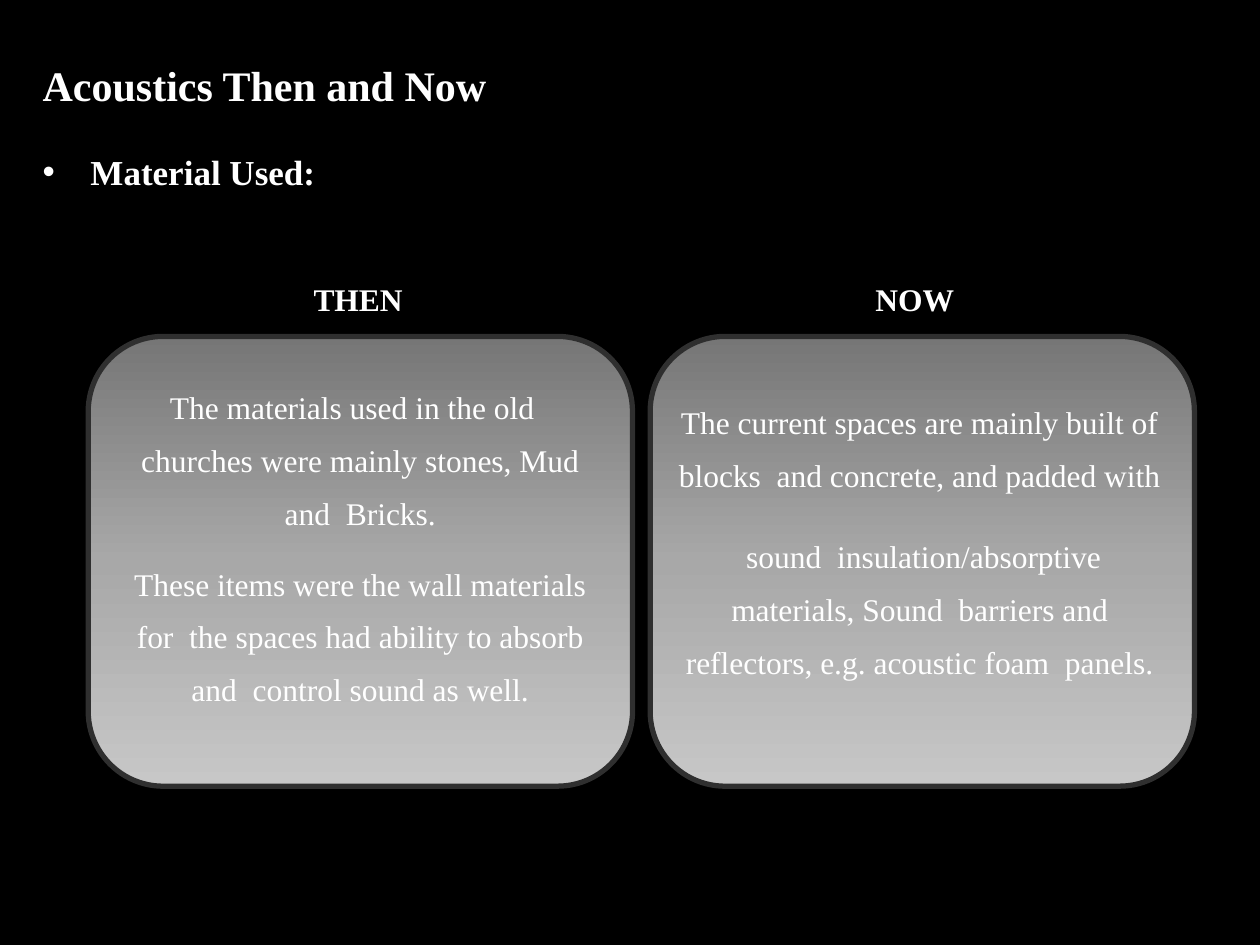
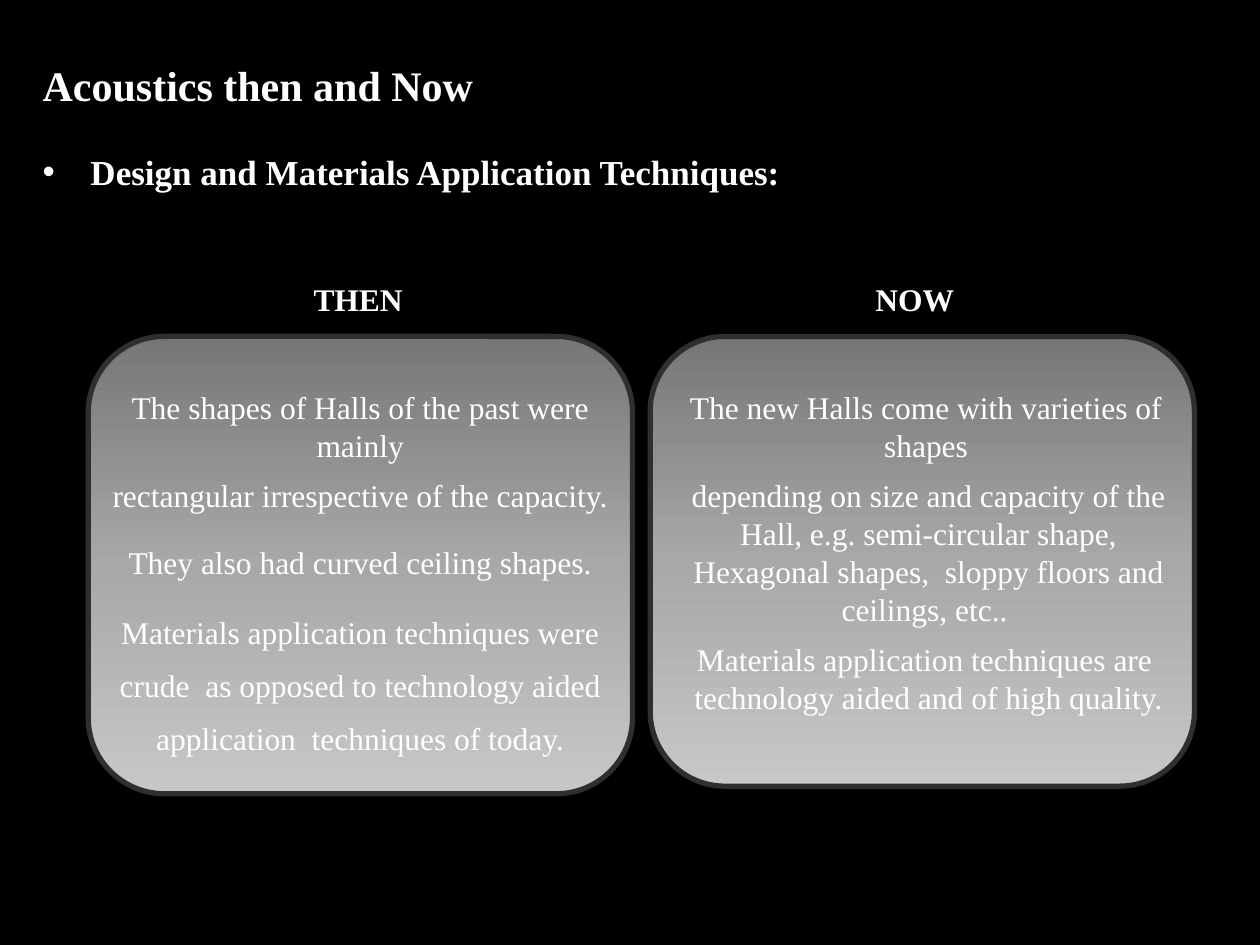
from copy import deepcopy

from lxml import etree
from pptx import Presentation
from pptx import util as u
from pptx.dml.color import RGBColor
from pptx.enum import shapes, text
from pptx.oxml import ns

COLOURS = {
    "back": "000000",
    "text": "FFFFFF",
    "edge": "2F2F2F",
    "top": "767676",
    "middle": "A8A8A8",
    "bottom": "C7C7C7",
}
FONT = "Times New Roman"
COLUMN_STEP = 4.46
COLUMN_NAMES = ("THEN", "NOW")
TEXT_SPANS = ((0.63, 4.46), (5.16, 4.28))

SLIDES = [
    {
        "title": "Acoustics Then and Now",
        "topic": "Material Used:",
        "heights": (3.57, 3.57),
        "columns": (
            [
                ("The materials used in the old", {"align": "LEFT", "before": 5.6, "indent": 0.62}),
                ("churches were mainly stones, Mud and  Bricks.",
                 {"indent": 0.25, "right": 0.25, "spacing": 1.4}),
                ("These items were the wall materials for  the spaces had ability to absorb "
                 "and  control sound as well.",
                 {"indent": 0.25, "right": 0.25, "spacing": 1.4, "before": 10.3}),
            ],
            [
                ("The current spaces are mainly built of blocks  and concrete, and padded with",
                 {"indent": 0.11, "right": 0.11, "spacing": 1.4, "before": 16.4}),
                (" sound  insulation/absorptive materials, Sound  barriers and reflectors, "
                 "e.g. acoustic foam  panels.",
                 {"indent": 0.11, "right": 0.11, "spacing": 1.4, "before": 16.4}),
            ],
        ),
    },
    {
        "title": "Acoustics then and Now",
        "topic": "Design and Materials Application Techniques:",
        "heights": (3.63, 3.57),
        "columns": (
            [
                ("The shapes of Halls of the past were mainly", {"before": 4.7}),
                ("rectangular irrespective of the capacity.", {"before": 7.2}),
                ("They also had curved ceiling shapes.", {"before": 16.8}),
                ("Materials application techniques were crude  as opposed to technology aided "
                 "application  techniques of today.",
                 {"indent": 0.1, "right": 0.1, "spacing": 1.4, "before": 9.8}),
            ],
            [
                ("The new Halls come with varieties of shapes", {"indent": 0.1, "before": 4.7}),
                ("depending on size and capacity of the Hall, e.g. semi-circular shape, "
                 "Hexagonal shapes,  sloppy floors and ceilings, etc.. ",
                 {"indent": 0.14, "before": 7.2}),
                ("Materials application techniques are  technology aided and of high quality.",
                 {"indent": 0.14, "before": 7.2}),
            ],
        ),
    },
]


def colour(name):
    return RGBColor.from_string(COLOURS[name])


def write(para, words, size=18, bold=False, align="CENTER", before=0, spacing=None,
          indent=0, right=0, bullet=None):
    para.alignment = getattr(text.PP_ALIGN, align)
    para.space_before = u.Pt(before)
    if spacing:
        para.line_spacing = spacing
    properties = para._p.get_or_add_pPr()
    properties.set("marL", str(u.Inches(indent)))
    properties.set("marR", str(u.Inches(right)))
    properties.set("indent", str(u.Inches(-indent if bullet else 0)))
    if bullet:
        etree.SubElement(properties, ns.qn("a:buFont"), typeface="Arial")
        etree.SubElement(properties, ns.qn("a:buChar"), char=bullet)
    span = para.add_run()
    span.text = words
    span.font.name = FONT
    span.font.size = u.Pt(size)
    span.font.bold = bold
    span.font.color.rgb = colour("text")


class ComparisonDeck:
    def __init__(self):
        self.deck = Presentation()
        self.deck.slide_width = u.Inches(10)
        self.deck.slide_height = u.Inches(7.5)
        self.page = None

    def add_page(self):
        self.page = self.deck.slides.add_slide(self.deck.slide_layouts[6])
        fill = self.page.background.fill
        fill.solid()
        fill.fore_color.rgb = colour("back")

    def add_text(self, left, top, width, height, lines):
        box = self.page.shapes.add_textbox(*map(u.Inches, (left, top, width, height)))
        frame = box.text_frame
        frame.word_wrap = True
        frame.auto_size = text.MSO_AUTO_SIZE.SHAPE_TO_FIT_TEXT
        for index, (words, style) in enumerate(lines):
            para = frame.add_paragraph() if index else frame.paragraphs[0]
            write(para, words, **style)

    def add_heading(self, title, topic):
        self.add_text(0.24, 0.42, 9.54, 1.18, [
            (title, {"size": 24, "bold": True, "align": "LEFT"}),
            (topic, {"size": 20, "bold": True, "align": "LEFT", "before": 23.5,
                     "indent": 0.38, "bullet": "•"}),
        ])

    def add_panel(self, left, height):
        panel = self.page.shapes.add_shape(
            shapes.MSO_SHAPE.ROUNDED_RECTANGLE,
            *map(u.Inches, (left, 2.67, 4.32, height)))
        panel.shadow.inherit = False
        panel.line.color.rgb = colour("edge")
        panel.line.width = u.Pt(3)
        panel.fill.gradient()
        panel.fill.gradient_angle = 270
        stop_list = panel._element.spPr.find(".//" + ns.qn("a:gsLst"))
        stop_list.insert(1, deepcopy(stop_list[0]))
        stops = zip(panel.fill.gradient_stops, ("top", "middle", "bottom"), (0, 0.5, 1))
        for stop, name, position in stops:
            stop.color.rgb = colour(name)
            stop.position = position

    def add_column(self, index, height, lines):
        shift = index * COLUMN_STEP
        left, width = TEXT_SPANS[index]
        self.add_panel(0.7 + shift, height)
        self.add_text(left, 3.03, width, height - 0.9, lines)
        self.add_text(2.39 + shift, 2.17, 5, 0.4,
                      [(COLUMN_NAMES[index], {"bold": True, "align": "LEFT"})])


def main():
    builder = ComparisonDeck()
    for content in SLIDES:
        builder.add_page()
        builder.add_heading(content["title"], content["topic"])
        for index, lines in enumerate(content["columns"]):
            builder.add_column(index, content["heights"][index], lines)
    builder.deck.save("out.pptx")


if __name__ == "__main__":
    main()
